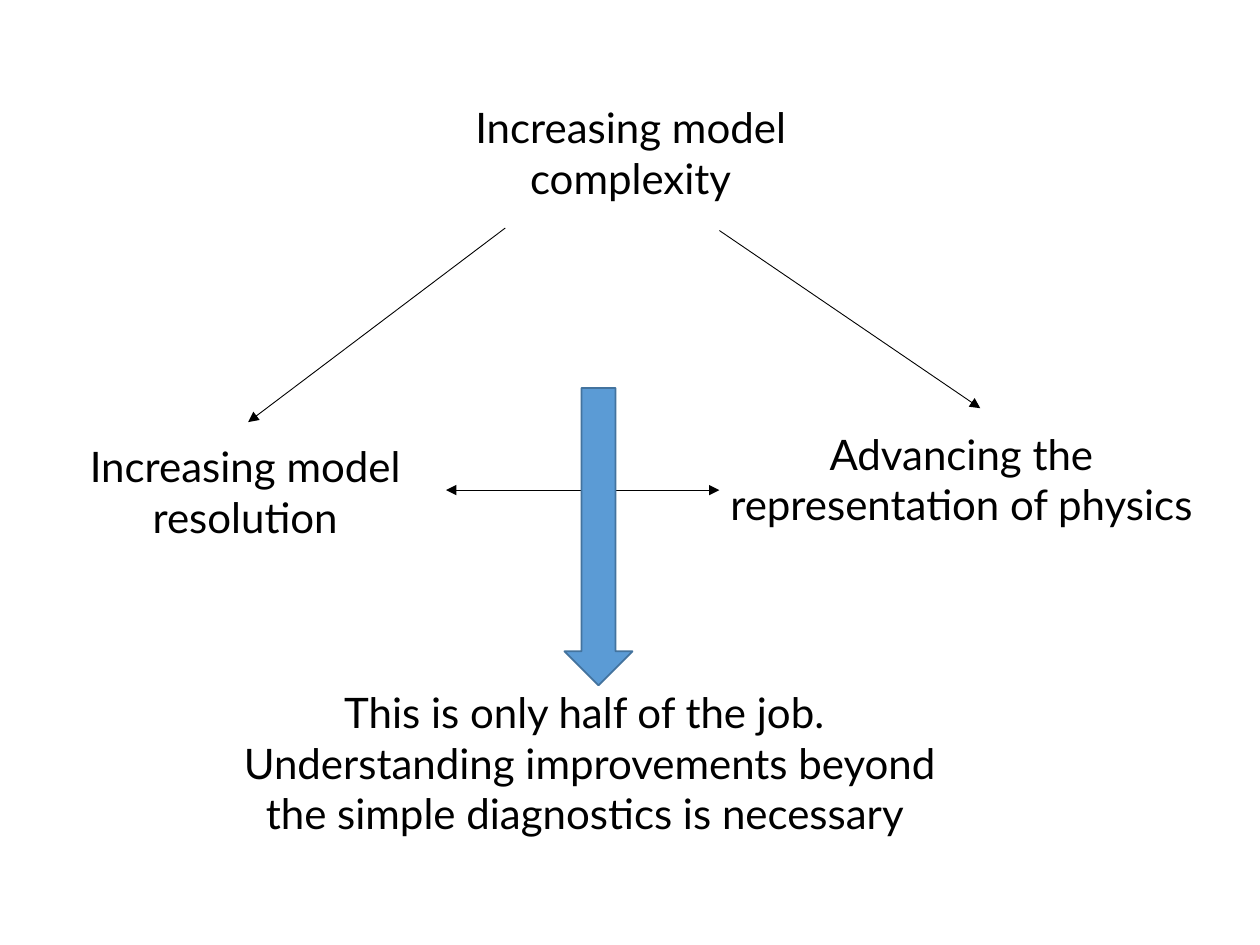
from dataclasses import dataclass

from lxml.etree import SubElement
from pptx import Presentation
from pptx.dml.color import RGBColor
from pptx.enum.shapes import MSO_CONNECTOR, MSO_SHAPE
from pptx.enum.text import MSO_AUTO_SIZE, PP_ALIGN
from pptx.oxml.ns import qn
from pptx.util import Pt

PX = 9144  # EMU per px, 100 px to the inch


@dataclass(frozen=True)
class Theme:
    font: str = "Lato"
    text_size: int = 24
    ink: RGBColor = RGBColor(0x00, 0x00, 0x00)
    arrow_fill: RGBColor = RGBColor(0x5B, 0x9B, 0xD5)
    arrow_edge: RGBColor = RGBColor(0x43, 0x73, 0x9E)
    link_width: float = 0.5
    edge_width: float = 1


THEME = Theme()


def emu(*lengths):
    return [length * PX for length in lengths]


def add_statement(slide, box, text):
    """Centred text, one paragraph for each line of the string."""
    frame = slide.shapes.add_textbox(*emu(*box)).text_frame
    frame.word_wrap = True
    frame.auto_size = MSO_AUTO_SIZE.SHAPE_TO_FIT_TEXT
    frame.text = text
    for paragraph in frame.paragraphs:
        paragraph.alignment = PP_ALIGN.CENTER
        for run in paragraph.runs:
            run.font.name = THEME.font
            run.font.size = Pt(THEME.text_size)
            run.font.color.rgb = THEME.ink


def add_link(slide, start, end, ends=("tailEnd",)):
    """Thin line with a triangle at each of the named ends."""
    link = slide.shapes.add_connector(MSO_CONNECTOR.STRAIGHT, *emu(*start, *end))
    link.line.color.rgb = THEME.ink
    link.line.width = Pt(THEME.link_width)
    properties = link._element.spPr
    for tag in ends:
        SubElement(properties.find(qn("a:ln")), qn(f"a:{tag}"), type="triangle")
    SubElement(properties, qn("a:effectLst"))


def add_model_triangle(slide, box):
    """Three ways to improve models and the links between them."""
    left, top, width, height = box

    def at(x, y):
        return left + x, top + y

    # Corners of the triangle
    corners = [
        (287, 0, 427, "Increasing model complexity"),
        (549, 259, 428, "Advancing the representation of physics"),
        (0, 269, 389, "Increasing model resolution"),
    ]
    label_height = height - 269
    for x, y, label_width, text in corners:
        add_statement(slide, (*at(x, y), label_width, label_height), text)

    # Links between the corners
    add_link(slide, at(401, 105), at(197, 259))
    add_link(slide, at(571, 107), at(778, 248))
    add_link(slide, at(354, 313), at(571, 313), ("headEnd", "tailEnd"))


def add_conclusion(slide, box):
    """Block arrow leading down to the closing statement."""
    left, top, width, height = box
    arrow_height = 236
    arrow = slide.shapes.add_shape(
        MSO_SHAPE.DOWN_ARROW, *emu(left + 292, top, 54, arrow_height))
    arrow.shadow.inherit = False
    arrow.fill.solid()
    arrow.fill.fore_color.rgb = THEME.arrow_fill
    arrow.line.color.rgb = THEME.arrow_edge
    arrow.line.width = Pt(THEME.edge_width)

    statement_top = arrow_height - 4
    add_statement(
        slide,
        (left, top + statement_top, width, height - statement_top),
        "This is only half of the job. \n"
        "Understanding improvements beyond the simple diagnostics is necessary ",
    )


def main():
    deck = Presentation()
    deck.slide_width, deck.slide_height = emu(1000, 750)
    slide = deck.slides.add_slide(deck.slide_layouts[6])
    add_model_triangle(slide, (0, 76, 977, 360))
    add_conclusion(slide, (156, 308, 624, 363))
    deck.save("out.pptx")


if __name__ == "__main__":
    main()
